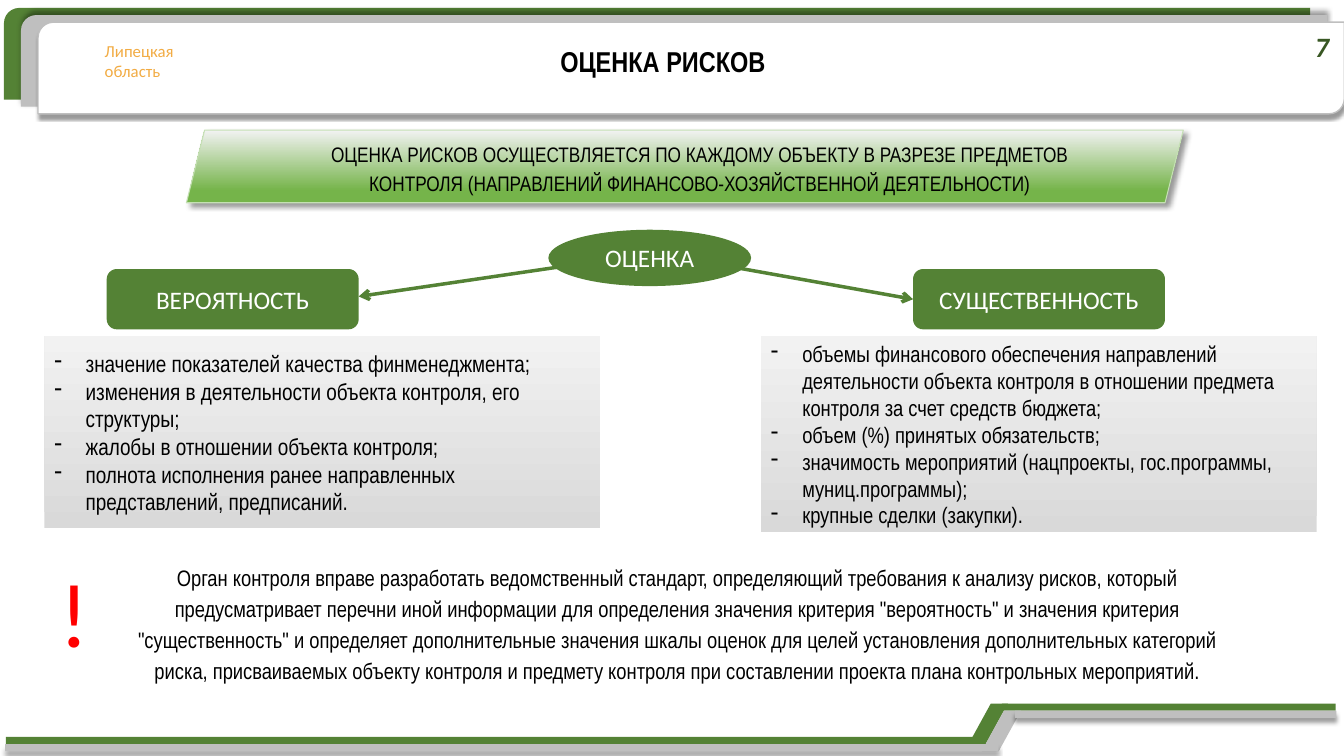
from dataclasses import dataclass

from lxml.etree import SubElement
from pptx import Presentation
from pptx.dml.color import RGBColor
from pptx.enum.shapes import MSO_CONNECTOR, MSO_SHAPE
from pptx.enum.text import MSO_ANCHOR, MSO_AUTO_SIZE, PP_ALIGN
from pptx.oxml.ns import qn
from pptx.util import Cm, Pt

REGION = ["Липецкая", "область"]
TITLE = "ОЦЕНКА РИСКОВ"
PAGE_NUMBER = "7"
BANNER = ("ОЦЕНКА РИСКОВ ОСУЩЕСТВЛЯЕТСЯ ПО КАЖДОМУ ОБЪЕКТУ В РАЗРЕЗЕ ПРЕДМЕТОВ "
          "КОНТРОЛЯ (НАПРАВЛЕНИЙ ФИНАНСОВО-ХОЗЯЙСТВЕННОЙ ДЕЯТЕЛЬНОСТИ)")
ROOT = "ОЦЕНКА"
PROBABILITY = [
    "значение показателей качества финменеджмента;",
    "изменения в деятельности объекта контроля, его структуры;",
    "жалобы в отношении объекта контроля;",
    "полнота исполнения ранее направленных представлений, предписаний.",
]
MATERIALITY = [
    "объемы финансового обеспечения направлений деятельности объекта контроля "
    "в отношении предмета контроля за счет средств бюджета;",
    "объем (%) принятых обязательств;",
    "значимость мероприятий (нацпроекты, гос.программы, муниц.программы);",
    "крупные сделки (закупки).",
]
NOTE = ("Орган контроля вправе разработать ведомственный стандарт, определяющий "
        "требования к анализу рисков, который предусматривает перечни иной информации "
        "для определения значения критерия \"вероятность\" и значения критерия "
        "\"существенность\" и определяет дополнительные значения шкалы оценок для целей "
        "установления дополнительных категорий риска, присваиваемых объекту контроля "
        "и предмету контроля при составлении проекта плана контрольных мероприятий.")


@dataclass(frozen=True)
class Theme:
    green: str = "548235"
    dark_green: str = "385723"
    pale_green: str = "C5E0B4"
    grey: str = "BFBFBF"
    white: str = "FFFFFF"
    black: str = "000000"
    orange: str = "F2AC44"
    red: str = "FF0000"
    banner_fill: tuple = ((17, "75B44A"), (100, "F2F2F2"))
    panel_fill: tuple = ((0, "D9D9D9"), (100, "F2F2F2"))
    narrow: str = "Arial Narrow"
    plain: str = "Calibri"
    region: float = 12
    title: float = 20.5
    banner: float = 15
    node: float = 18
    note: float = 16
    mark: float = 65
    number: float = 20


THEME = Theme()

# Branch: heading, criteria, type size, heading left, panel left, panel height,
# arrow start and arrow end
BRANCHES = [
    ("СУЩЕСТВЕННОСТЬ", MATERIALITY, 16, 23.01, 19.18, 4.93, (18.47, 6.73), (23.01, 7.54)),
    ("ВЕРОЯТНОСТЬ", PROBABILITY, 16.5, 2.69, 1.12, 4.83, (14.07, 6.73), (9.04, 7.47)),
]
# Header card: fill, outline, shadow (blur, distance, direction)
HEADER_CARDS = [
    (THEME.green, None, None),
    (THEME.grey, None, (4, 3, 270)),
    (THEME.white, (THEME.grey, 1), (2, 3, 90)),
]
# Footer ribbon: fill, left, foot of the slope, right, top, shadow
FOOTER_RIBBONS = [
    (THEME.green, 0.15, 24.41, 33.66, 17.73, None),
    (THEME.grey, 0.13, 24.74, 33.68, 17.91, (3, 3, 90)),
]
RIBBON_THICKNESS, SLOPE_RUN, SLOPE_HEIGHT = 0.18, 0.56, 1.02
SLOPE_WIDTH = 0.43

presentation = Presentation()
presentation.slide_width, presentation.slide_height = Cm(33.87), Cm(19.05)
slide = presentation.slides.add_slide(presentation.slide_layouts[6])
shapes = slide.shapes


def rgb(colour):
    return RGBColor.from_string(colour)


def paint(shape, fill=None, outline=None, shadow=None):
    """Fill is a colour, stops that run from bottom to top, or None."""
    if fill is None:
        shape.fill.background()
    elif isinstance(fill, str):
        shape.fill.solid()
        shape.fill.fore_color.rgb = rgb(fill)
    else:
        shape.fill.gradient()
        shape.fill.gradient_angle = 90
        for stop, (percent, colour) in zip(shape.fill.gradient_stops, fill):
            stop.position = percent / 100
            stop.color.rgb = rgb(colour)
    if outline:
        shape.line.color.rgb = rgb(outline[0])
        shape.line.width = Pt(outline[1])
    else:
        shape.line.fill.background()
    shape.shadow.inherit = False
    if shadow:
        blur, distance, direction = shadow
        effects = shape.element.spPr.find(qn("a:effectLst"))
        outer = SubElement(effects, qn("a:outerShdw"), blurRad=str(Pt(blur)),
                           dist=str(Pt(distance)), dir=str(direction * 60000),
                           algn="ctr", rotWithShape="0")
        colour = SubElement(outer, qn("a:srgbClr"), val=THEME.black)
        SubElement(colour, qn("a:alpha"), val="40000")


def add_figure(preset, box, fill=None, outline=None, shadow=None):
    figure = shapes.add_shape(preset, *(Cm(length) for length in box))
    paint(figure, fill, outline, shadow)
    return figure


def write(shape, lines, size, colour=THEME.black, font=THEME.narrow, bold=False,
          italic=False, align=PP_ALIGN.CENTER, anchor=MSO_ANCHOR.MIDDLE,
          bullet=None, indent=0, spacing=None, inset=None):
    frame = shape.text_frame
    frame.word_wrap = True
    frame.vertical_anchor = anchor
    if inset is not None:
        frame.margin_left = frame.margin_right = Cm(inset)
        frame.margin_top = frame.margin_bottom = Cm(inset)
    for index, line in enumerate(lines):
        paragraph = frame.add_paragraph() if index else frame.paragraphs[0]
        properties = paragraph._p.get_or_add_pPr()
        if indent:
            properties.set("marL", str(Cm(indent)))
        if bullet:
            properties.set("indent", str(-Cm(indent)))
            SubElement(properties, qn("a:buChar"), char=bullet)
        paragraph.alignment = align
        if spacing:
            paragraph.line_spacing = spacing
        run = paragraph.add_run()
        run.text = line
        run.font.name, run.font.size = font, Pt(size)
        run.font.bold, run.font.italic = bold, italic
        run.font.color.rgb = rgb(colour)


def add_label(box, lines, size, grow=True, anchor=MSO_ANCHOR.TOP, **style):
    label = shapes.add_textbox(*(Cm(length) for length in box))
    write(label, lines, size, anchor=anchor, **style)
    if grow:
        label.text_frame.auto_size = MSO_AUTO_SIZE.SHAPE_TO_FIT_TEXT


def add_arrow(start, end):
    arrow = shapes.add_connector(MSO_CONNECTOR.STRAIGHT,
                                 *(Cm(length) for length in start + end))
    arrow.line.color.rgb = rgb(THEME.green)
    arrow.line.width = Pt(2.5)
    SubElement(arrow.line._get_or_add_ln(), qn("a:tailEnd"), type="arrow")
    SubElement(arrow.element.spPr, qn("a:effectLst"))


def add_ribbon(fill, left, foot, right, top, shadow):
    """A low bar and a high bar joined by a slope."""
    bottom, crest = top + SLOPE_HEIGHT, foot + SLOPE_RUN
    outline = [(foot, bottom), (crest, top), (crest + SLOPE_WIDTH, top),
               (foot + SLOPE_WIDTH, bottom)]
    points = [(Cm(x), Cm(y)) for x, y in outline]
    builder = shapes.build_freeform(*points[0])
    builder.add_line_segments(points[1:], close=True)
    paint(builder.convert_to_shape(), fill)
    high_left = foot + 0.84
    for x, y, end in [(left, bottom - RIBBON_THICKNESS, foot + SLOPE_WIDTH),
                      (high_left, top, right)]:
        add_figure(MSO_SHAPE.RECTANGLE, (x, y, end - x, RIBBON_THICKNESS), fill, shadow=shadow)


for step, card in enumerate(HEADER_CARDS):
    add_figure(MSO_SHAPE.ROUND_2_DIAG_RECTANGLE,
               (0.1 + 0.43 * step, 0.2 + 0.18 * step, 32.92, 2.31), *card)
add_label((2.39, 0.91, 2.31, 1.27), REGION, THEME.region, colour=THEME.orange,
          font=THEME.plain, align=PP_ALIGN.LEFT)
for ribbon in FOOTER_RIBBONS:
    add_ribbon(*ribbon)

add_label((5.13, 0.99, 23.16, 1.14), [TITLE], THEME.title, bold=True)
banner = add_figure(MSO_SHAPE.PARALLELOGRAM, (4.7, 3.28, 25.12, 1.83), THEME.banner_fill,
                    (THEME.pale_green, 0.75), (4, 3, 45))
write(banner, [BANNER], THEME.banner, indent=0.76, spacing=1.15, inset=0.1)

nodes = [(MSO_SHAPE.OVAL, (13.82, 5.79, 5.11, 1.42), ROOT)]
nodes += [(MSO_SHAPE.ROUNDED_RECTANGLE, (branch[3], 6.78, 6.35, 1.52), branch[0])
          for branch in BRANCHES]
for preset, box, caption in nodes:
    write(add_figure(preset, box, THEME.green), [caption], THEME.node,
          colour=THEME.white, font=THEME.plain)

for _, criteria, size, _, left, height, start, end in BRANCHES:
    panel = add_figure(MSO_SHAPE.RECTANGLE, (left, 8.48, 14, height), THEME.panel_fill)
    write(panel, criteria, size, align=PP_ALIGN.LEFT, bullet="-", indent=0.79)
    add_arrow(start, end)

note = add_figure(MSO_SHAPE.PARALLELOGRAM, (-1.02, 13.89, 35.43, 3.56))
write(note, [NOTE], THEME.note, indent=0.76, spacing=1.15, inset=0.1)
add_label((0.58, 13.89, 2.59, 3.02), ["!"], THEME.mark, colour=THEME.red, font=THEME.plain)
add_label((32.89, 0.69, 0.71, 0.94), [PAGE_NUMBER], THEME.number, grow=False,
          anchor=MSO_ANCHOR.MIDDLE, colour=THEME.dark_green, font=THEME.plain,
          bold=True, italic=True)

presentation.save("out.pptx")
